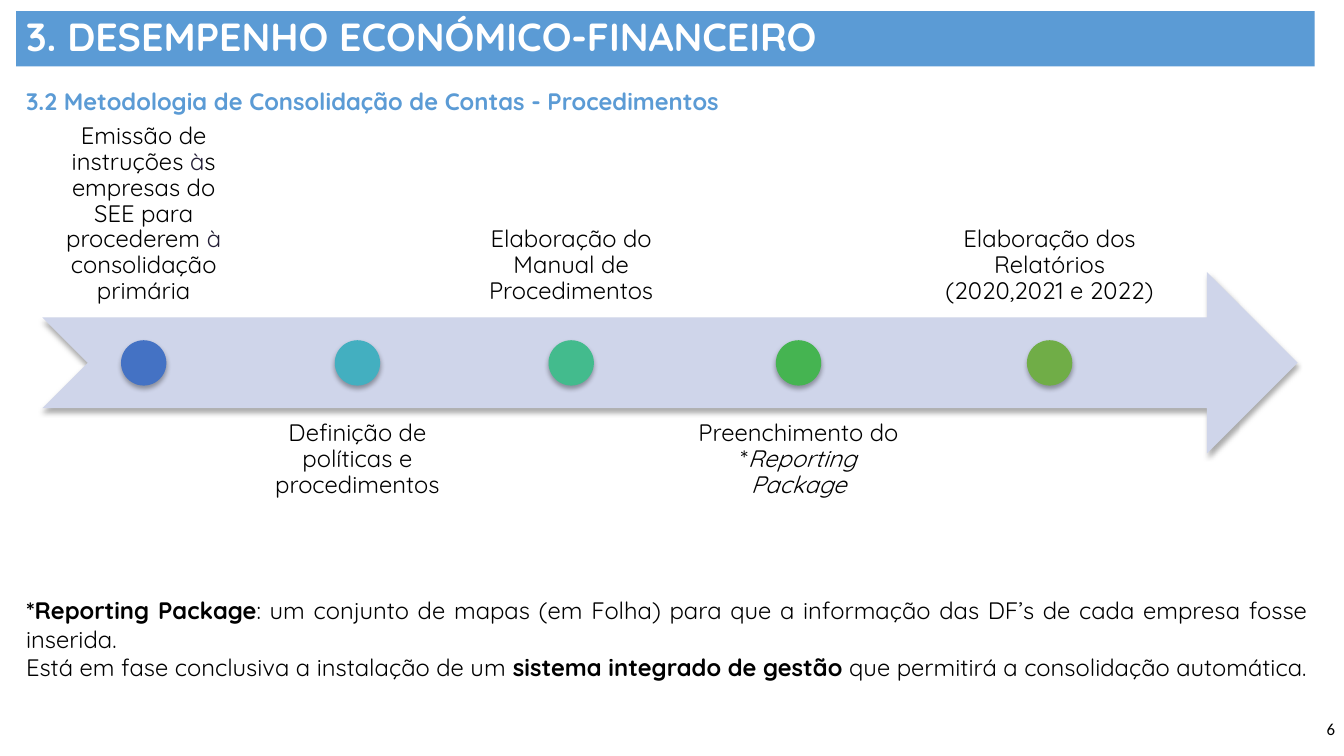
import pptx
import pptx.dml.color
import pptx.enum.shapes
import pptx.enum.text
import pptx.oxml
import pptx.util
from lxml import etree

ALIGN = pptx.enum.text.PP_ALIGN
ANCHOR = pptx.enum.text.MSO_ANCHOR
SHAPE = pptx.enum.shapes.MSO_SHAPE
BLUE, BLACK, WHITE, INDIGO = "5B9BD5", "000000", "FFFFFF", "231E36"
HEADING_FONT = "Quicksand"
BODY_SIZE = 17
LEFT_EDGE = 0.16

# Each step: label width, dot colour, runs of (text, colour, italic)
STEPS = [
    (2.01, "4472C4", [("Emissão de instruções ", BLACK, False), ("à", INDIGO, False),
                      ("s empresas do SEE para procederem ", BLACK, False),
                      ("à", INDIGO, False), (" consolidação primária", BLACK, False)]),
    (2.01, "43AFC0", [("Definição de políticas e procedimentos", BLACK, False)]),
    (2.01, "43BB8D", [("Elaboração do Manual de Procedimentos", BLACK, False)]),
    (2.28, "45B451", [("Preenchimento do *", BLACK, False),
                      ("Reporting Package", BLACK, True)]),
    (2.48, "70AD47", [("Elaboração dos Relatórios (2020,2021 e 2022)", BLACK, False)]),
]

# Each paragraph: runs of (text, bold)
NOTES = [
    [("*Reporting Package", True),
     (": um conjunto de mapas (em Folha) para que a informação das DF’s "
      "de cada empresa fosse inserida.", False)],
    [("Está em fase conclusiva a instalação de um ", False),
     ("sistema integrado de gestão", True),
     (" que permitirá a consolidação automática.", False)],
]


def color(value):
    return pptx.dml.color.RGBColor.from_string(value)


def inches(box):
    return [pptx.util.Inches(length) for length in box]


def add_run(paragraph, text, value=BLACK, size=BODY_SIZE, font=HEADING_FONT,
            bold=False, italic=False):
    run = paragraph.add_run()
    run.text = text
    run.font.name, run.font.size = font, pptx.util.Pt(size)
    run.font.bold, run.font.italic = bold, italic
    run.font.color.rgb = color(value)


def add_text_frame(slide, box, anchor=ANCHOR.TOP, inset=None):
    frame = slide.shapes.add_textbox(*inches(box)).text_frame
    frame.word_wrap = True
    frame.vertical_anchor = anchor
    if inset is not None:
        frame.margin_left = frame.margin_right = pptx.util.Inches(inset)
        frame.margin_top = frame.margin_bottom = pptx.util.Inches(inset)
    return frame


def add_shadowed_shape(slide, kind, box, fill):
    shape = slide.shapes.add_shape(kind, *inches(box))
    shape.shadow.inherit = False
    shape.fill.solid()
    shape.fill.fore_color.rgb = color(fill)
    shape.line.fill.background()
    # Soft shadow falling straight down
    effects = shape._element.spPr.find(pptx.oxml.ns.qn("a:effectLst"))
    shadow = etree.SubElement(effects, pptx.oxml.ns.qn("a:outerShdw"),
                              blurRad=str(pptx.util.Pt(3.5)), dist=str(pptx.util.Pt(2.2)),
                              dir="5400000", algn="ctr", rotWithShape="0")
    tint = etree.SubElement(shadow, pptx.oxml.ns.qn("a:srgbClr"), val=BLACK)
    etree.SubElement(tint, pptx.oxml.ns.qn("a:alpha"), val="32000")


def add_title(slide, box):
    title = slide.shapes.title
    title.left, title.top, title.width, title.height = inches(box)
    title.fill.solid()
    title.fill.fore_color.rgb = color(BLUE)
    title.text_frame.auto_size = pptx.enum.text.MSO_AUTO_SIZE.NONE
    title.text_frame.vertical_anchor = ANCHOR.MIDDLE
    paragraph = title.text_frame.paragraphs[0]
    paragraph.alignment, paragraph.line_spacing = ALIGN.JUSTIFY, 0.9
    add_run(paragraph, "3. DESEMPENHO ECONÓMICO-FINANCEIRO", WHITE, 28, bold=True)


def add_subtitle(slide, box):
    paragraph = add_text_frame(slide, box).paragraphs[0]
    paragraph.alignment, paragraph.line_spacing = ALIGN.JUSTIFY, 1.5
    add_run(paragraph, "3.2 Metodologia de Consolidação de Contas - Procedimentos",
            BLUE, bold=True)


def add_timeline(slide, box):
    left, top, width, height = box
    band = 0.4 * height
    middle = top + height / 2
    dot, gap = 0.45, 0.11

    add_shadowed_shape(slide, SHAPE.NOTCHED_RIGHT_ARROW,
                       (left, middle - band / 2, width, band), "CFD5EA")
    # Labels alternate above and below the arrow
    for index, (label_width, fill, runs) in enumerate(STEPS):
        above = index % 2 == 0
        label_top = top if above else top + height - band
        frame = add_text_frame(slide, (left, label_top, label_width, band),
                               ANCHOR.BOTTOM if above else ANCHOR.TOP, 0.13)
        paragraph = frame.paragraphs[0]
        paragraph.alignment, paragraph.line_spacing = ALIGN.CENTER, 0.9
        for text, value, italic in runs:
            add_run(paragraph, text, value, italic=italic)
        add_shadowed_shape(slide, SHAPE.OVAL,
                           (left + (label_width - dot) / 2, middle - dot / 2, dot, dot), fill)
        left += label_width + gap


def add_notes_text(slide, box):
    frame = add_text_frame(slide, box)
    for index, runs in enumerate(NOTES):
        paragraph = frame.add_paragraph() if index else frame.paragraphs[0]
        paragraph.alignment = ALIGN.JUSTIFY
        for text, bold in runs:
            add_run(paragraph, text, bold=bold)


def add_page_number(slide, box):
    paragraph = add_text_frame(slide, box, ANCHOR.MIDDLE).paragraphs[0]
    paragraph.alignment = ALIGN.RIGHT
    add_run(paragraph, "6", size=12, font="Calibri")


def main():
    presentation = pptx.Presentation()
    presentation.slide_width, presentation.slide_height = inches((13.33, 7.5))
    slide = presentation.slides.add_slide(presentation.slide_layouts.get_by_name("Title Only"))
    add_title(slide, (LEFT_EDGE, 0.11, 12.88, 0.55))
    add_page_number(slide, (12.88, 6.97, 0.46, 0.53))
    add_timeline(slide, (0.42, 1.35, 12.45, 4.5))
    add_subtitle(slide, (LEFT_EDGE, 0.67, 7.4, 0.53))
    add_notes_text(slide, (LEFT_EDGE, 5.86, 12.91, 1.25))
    presentation.save("out.pptx")


if __name__ == "__main__":
    main()
